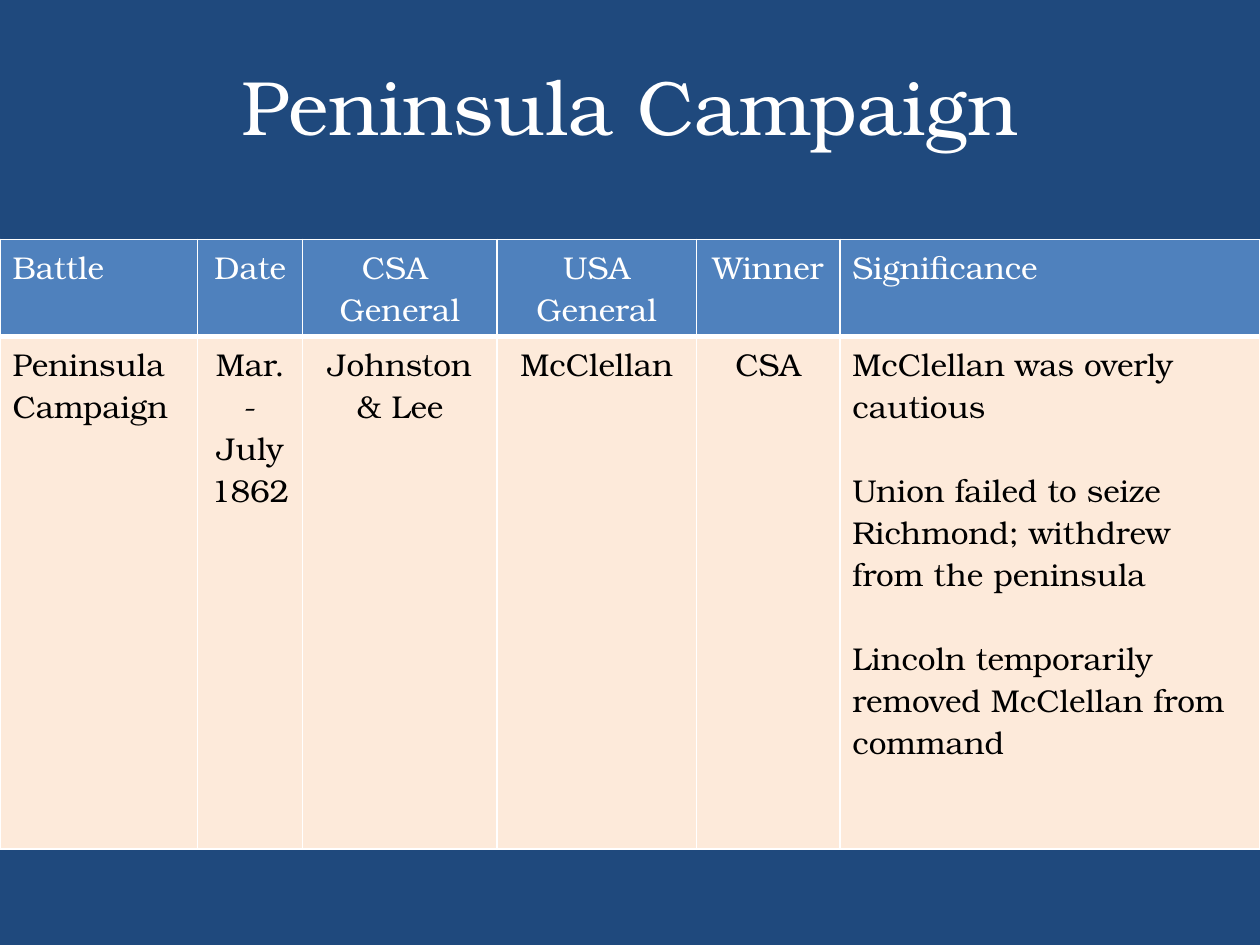
from dataclasses import dataclass

from lxml.etree import SubElement
from pptx import Presentation
from pptx.dml.color import RGBColor
from pptx.enum.text import MSO_ANCHOR, PP_ALIGN
from pptx.oxml.ns import qn
from pptx.slide import Slide
from pptx.table import _Cell
from pptx.text.text import TextFrame
from pptx.util import Pt

HUES = {"navy": "1F497D", "blue": "4F81BD", "peach": "FDEADA",
        "white": "FFFFFF", "black": "000000"}
FACE = "TeX Gyre Bonum"


@dataclass
class Column:
    width: float
    head: list[str]
    body: list[str]
    align: PP_ALIGN = PP_ALIGN.CENTER


@dataclass
class Band:
    height: float
    fill: str
    ink: str
    base: float


COLUMNS = [
    Column(113, ["Battle"], ["Peninsula Campaign"], PP_ALIGN.LEFT),
    Column(60, ["Date"], ["Mar.- July 1862"]),
    Column(111, ["CSA ", "General"], ["Johnston & Lee"]),
    Column(114, ["USA", "General"], ["McClellan"]),
    Column(82, ["Winner"], ["CSA"]),
    Column(240, ["Significance"],
           ["McClellan was overly cautious",
            "Union failed to seize Richmond; withdrew from the peninsula",
            "Lincoln temporarily removed McClellan from command"],
           PP_ALIGN.LEFT),
]
HEAD = Band(55.4, "blue", "white", 3)
BODY = Band(293, "peach", "black", 1)


def color(name: str) -> RGBColor:
    return RGBColor.from_string(HUES[name])


def write(frame: TextFrame, lines: list[str], size: float, ink: str,
          align: PP_ALIGN, gap: float = 0) -> None:
    frame.text = "\n".join(lines)
    style = {"name": FACE, "size": Pt(size), "bold": False}
    for para in frame.paragraphs:
        para.alignment = align
        for run in para.runs:
            for key, value in style.items():
                setattr(run.font, key, value)
            run.font.color.rgb = color(ink)
    for para in frame.paragraphs[:-1]:
        para.space_after = Pt(gap)


def edge(cell: _Cell, base: float) -> None:
    props = cell._tc.get_or_add_tcPr()
    sides = {"a:lnL": 1, "a:lnR": 1, "a:lnT": 1, "a:lnB": base}
    for tag, width in sides.items():
        line = SubElement(props, qn(tag), w=str(Pt(width)))
        fill = SubElement(line, qn("a:solidFill"))
        SubElement(fill, qn("a:srgbClr"), val=HUES["white"])


def paint(cell: _Cell, lines: list[str], band: Band, align: PP_ALIGN,
          gap: float) -> None:
    write(cell.text_frame, lines, 18, band.ink, align, gap)
    edge(cell, band.base)
    cell.fill.solid()
    cell.fill.fore_color.rgb = color(band.fill)


def add_title(slide: Slide) -> None:
    title = slide.shapes.title
    place = {"left": 36, "top": 24, "width": 648, "height": 72}
    for key, value in place.items():
        setattr(title, key, Pt(value))
    title.text_frame.vertical_anchor = MSO_ANCHOR.MIDDLE
    write(title.text_frame, ["Peninsula Campaign"], 44, "white", PP_ALIGN.CENTER)


def add_grid(slide: Slide) -> None:
    width = sum(col.width for col in COLUMNS)
    height = HEAD.height + BODY.height
    grid = slide.shapes.add_table(2, len(COLUMNS), Pt(0), Pt(136.8),
                                  Pt(width), Pt(height)).table
    for row, band in zip(grid.rows, (HEAD, BODY)):
        row.height = Pt(band.height)
    for spot, col in enumerate(COLUMNS):
        grid.columns[spot].width = Pt(col.width)
        paint(grid.cell(0, spot), col.head, HEAD, col.align, 0)
        paint(grid.cell(1, spot), col.body, BODY, col.align, 24)


def main() -> None:
    deck = Presentation()
    deck.slide_width, deck.slide_height = Pt(720), Pt(540)
    slide = deck.slides.add_slide(deck.slide_layouts[5])
    slide.background.fill.solid()
    slide.background.fill.fore_color.rgb = color("navy")
    add_title(slide)
    add_grid(slide)
    deck.save("out.pptx")


if __name__ == "__main__":
    main()
